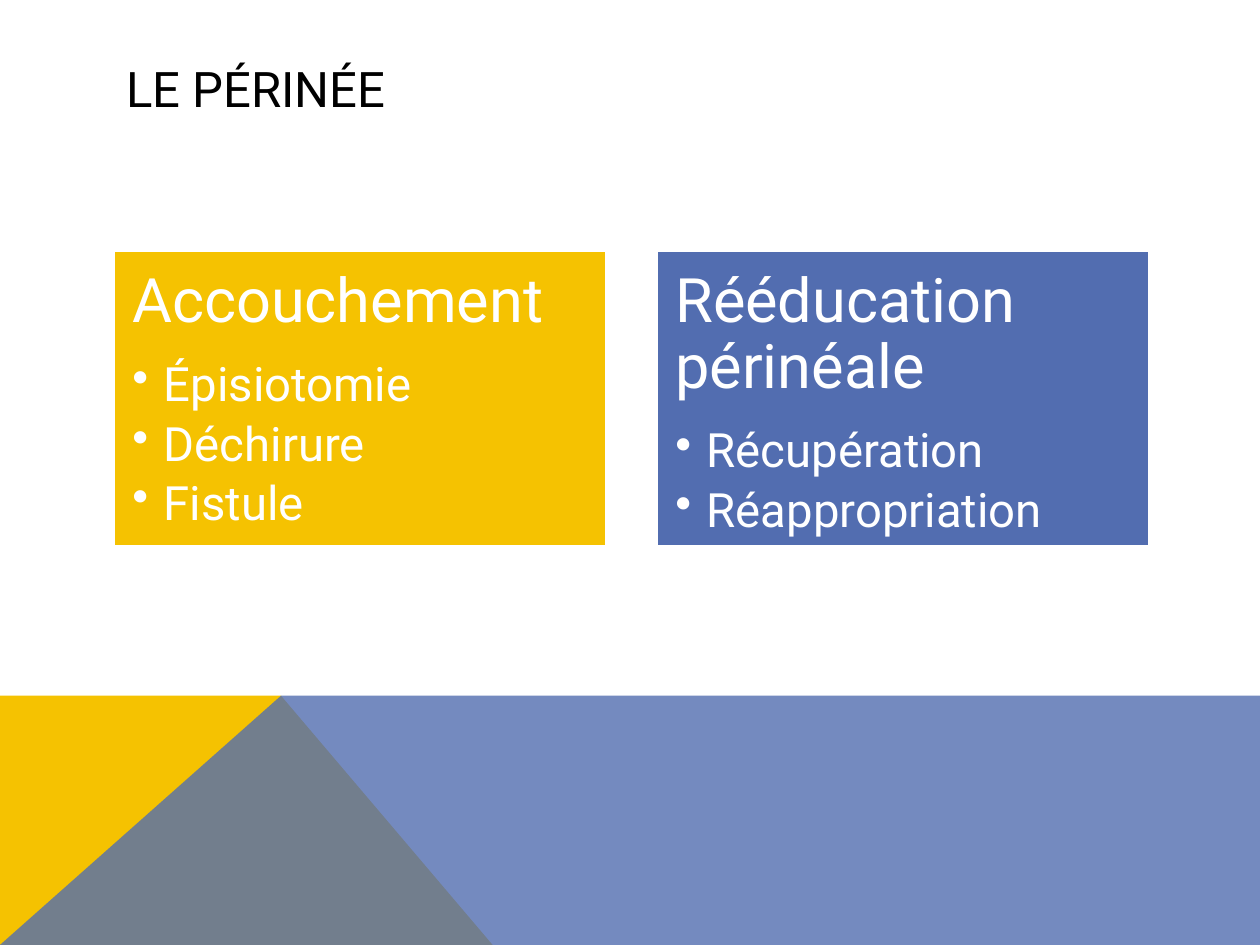
from lxml import etree
from pptx import Presentation
from pptx import util as u
from pptx.dml import color
from pptx.enum import shapes, text
from pptx.oxml import ns

COLORS = {"yellow": "F5C201", "blue": "526DB0", "white": "FFFFFF", "black": "000000"}
WIDTH, HEIGHT = 720, 540


class SlideBuilder:
    """Holds the style and the current slide; all lengths are in points."""

    font_name = "Roboto"
    heading_size, bullet_size = 35, 27
    inset, indent = 10.8, 18

    def __init__(self, slide):
        self.slide = slide

    def rgb(self, name):
        return color.RGBColor.from_string(COLORS[name])

    def fill(self, shape, name):
        shape.shadow.inherit = False
        shape.fill.solid()
        shape.fill.fore_color.rgb = self.rgb(name)

    def add_run(self, paragraph, words, size, name):
        run = paragraph.add_run()
        run.text = words
        run.font.name = self.font_name
        run.font.size = u.Pt(size)
        run.font.color.rgb = self.rgb(name)

    def title(self, words, left, top, width, height):
        title = self.slide.shapes.title
        title.left, title.top = u.Pt(left), u.Pt(top)
        title.width, title.height = u.Pt(width), u.Pt(height)
        title.text_frame.vertical_anchor = text.MSO_ANCHOR.MIDDLE
        paragraph = title.text_frame.paragraphs[0]
        paragraph.alignment = text.PP_ALIGN.LEFT
        self.add_run(paragraph, words, 28, "black")

    def polygon(self, points, name, opacity=100):
        corners = [(u.Pt(x), u.Pt(y)) for x, y in points]
        builder = self.slide.shapes.build_freeform(*corners[0])
        builder.add_line_segments(corners[1:], close=True)
        shape = builder.convert_to_shape()
        self.fill(shape, name)
        shape.line.fill.background()
        if opacity < 100:
            fill_color = shape._element.spPr.find(".//" + ns.qn("a:srgbClr"))
            etree.SubElement(fill_color, ns.qn("a:alpha"), val=str(opacity * 1000))

    def bullet(self, paragraph):
        paragraph.level = 1
        properties = paragraph._p.get_or_add_pPr()
        properties.set("marL", str(u.Pt(self.indent)))
        properties.set("indent", str(-u.Pt(self.indent)))
        etree.SubElement(properties, ns.qn("a:buChar"), char="•")

    def card(self, heading, items, name, left, top, width, height):
        shape = self.slide.shapes.add_shape(
            shapes.MSO_SHAPE.RECTANGLE, u.Pt(left), u.Pt(top), u.Pt(width), u.Pt(height))
        self.fill(shape, name)
        shape.line.color.rgb = self.rgb("white")
        shape.line.width = u.Pt(2)
        frame = shape.text_frame
        frame.word_wrap = True
        frame.vertical_anchor = text.MSO_ANCHOR.TOP
        frame.margin_left = frame.margin_right = u.Pt(self.inset)
        frame.margin_top = frame.margin_bottom = u.Pt(self.inset)
        for index, words in enumerate([heading, *items]):
            paragraph = frame.add_paragraph() if index else frame.paragraphs[0]
            paragraph.alignment = text.PP_ALIGN.LEFT
            paragraph.line_spacing = 0.9
            paragraph.space_after = u.Pt(4.7 if index else 14.4)
            if index:
                self.bullet(paragraph)
            self.add_run(paragraph, words, self.bullet_size if index else self.heading_size, "white")


def main():
    presentation = Presentation()
    presentation.slide_width, presentation.slide_height = u.Pt(WIDTH), u.Pt(HEIGHT)
    builder = SlideBuilder(presentation.slides.add_slide(presentation.slide_layouts[5]))

    # Bottom band: a yellow triangle under a translucent blue one
    band_top, peak = 397.6, 160.6
    builder.polygon([(0, HEIGHT), (0, band_top), (peak, band_top), (281.5, HEIGHT)], "yellow")
    builder.polygon([(0, HEIGHT), (peak, band_top), (WIDTH, band_top), (WIDTH, HEIGHT)],
                    "blue", opacity=80)

    # Title
    builder.title("LE PÉRINÉE", 64.8, 28.8, 592, 43.2)

    # Two cards side by side
    cards = [
        ("Accouchement", ["Épisiotomie", "Déchirure", "Fistule"], "yellow"),
        ("Rééducation périnéale", ["Récupération", "Réappropriation"], "blue"),
    ]
    card_width, gap = 282, 28.3
    for column, (heading, items, name) in enumerate(cards):
        left = 64.8 + column * (card_width + gap)
        builder.card(heading, items, name, left, 143.2, card_width, 169.2)

    presentation.save("out.pptx")


if __name__ == "__main__":
    main()
